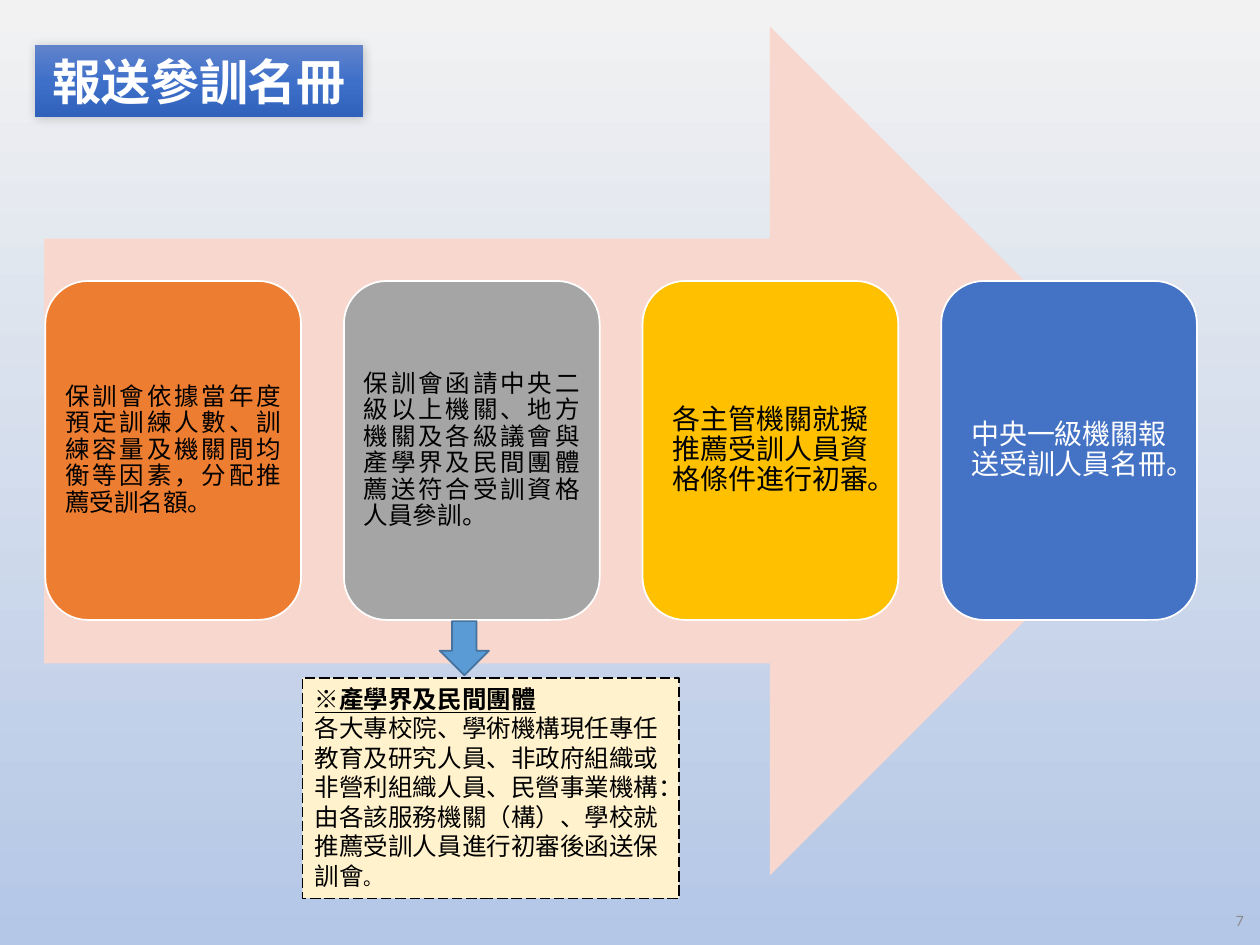
from lxml import etree
from pptx import Presentation
from pptx.dml.color import RGBColor
from pptx.enum.dml import MSO_LINE
from pptx.enum.shapes import MSO_SHAPE
from pptx.enum.text import MSO_ANCHOR, PP_ALIGN
from pptx.oxml.ns import qn
from pptx.util import Inches, Pt

RECT, ROUND = MSO_SHAPE.RECTANGLE, MSO_SHAPE.ROUNDED_RECTANGLE
RIGHT, DOWN = MSO_SHAPE.RIGHT_ARROW, MSO_SHAPE.DOWN_ARROW
MID, TOP = MSO_ANCHOR.MIDDLE, MSO_ANCHOR.TOP
LEFT, CENTER, END, JUST = PP_ALIGN.LEFT, PP_ALIGN.CENTER, PP_ALIGN.RIGHT, PP_ALIGN.JUSTIFY
DASH = MSO_LINE.LONG_DASH
CJK = "Noto Sans CJK SC"

COLORS = {
    "black": "000000", "white": "FFFFFF", "gray": "8C8C8C",
    "pink": "F8D7CE", "orange": "ED7D31", "silver": "A5A5A5",
    "gold": "FFC000", "blue": "4472C4", "cream": "FFF2CC",
    "sky": "5B9BD5", "steel": "43739E", "pale": "F2F2F2", "mist": "B4C7E7",
    "light": "6183CB", "mid": "3E70CA", "deep": "3062BB",
}
TITLE = "報送參訓名冊"
STEPS = [
    ("保訓會依據當年度預定訓練人數、訓練容量及機關間均衡等因素，分配推薦受訓名額。",
     "orange", "black", 14, JUST, 0.06),
    ("保訓會函請中央二級以上機關、地方機關及各級議會與產學界及民間團體薦送符合受訓資格人員參訓。",
     "silver", "black", 14, JUST, 0.06),
    ("各主管機關就擬推薦受訓人員資格條件進行初審。", "gold", "black", 16, CENTER, 0.07),
    ("中央一級機關報送受訓人員名冊。", "blue", "white", 16, CENTER, 0.07),
]
HEAD = "※產學界及民間團體"
NOTE = ("各大專校院、學術機構現任專任教育及研究人員、非政府組織或非營利組織人員、"
        "民營事業機構：由各該服務機關（構）、學校就推薦受訓人員進行初審後函送保訓會")
STOP = "。"
PAGE = "7"


def rgb(name):
    return RGBColor.from_string(COLORS[name])


def blend(fill, root, names):
    fill.gradient()
    fill.gradient_angle = 270
    stops = next(root.iter(qn("a:gsLst")))
    for old in list(stops):
        stops.remove(old)
    for i, name in enumerate(names):
        spot = etree.SubElement(stops, qn("a:gs"), pos=str(100000 * i // (len(names) - 1)))
        etree.SubElement(spot, qn("a:srgbClr"), val=COLORS[name])


def add_shape(kind, box, fill=None, line=None, width=1):
    shape = slide.shapes.add_shape(kind, *map(Inches, box))
    shape.shadow.inherit = False
    if fill:
        shape.fill.solid()
        shape.fill.fore_color.rgb = rgb(fill)
    if line:
        shape.line.color.rgb = rgb(line)
        shape.line.width = Pt(width)
    else:
        shape.line.fill.background()
    return shape


def set_frame(shape, anchor, inset=None):
    frame = shape.text_frame
    frame.word_wrap = True
    frame.vertical_anchor = anchor
    if inset:
        frame.margin_left = frame.margin_right = Inches(inset)
        frame.margin_top = frame.margin_bottom = Inches(inset)
    return frame


def style(para, size, color, align=LEFT, bold=False, face=CJK):
    para.alignment = align
    font = para.font
    font.size, font.bold, font.name = Pt(size), bold, face
    font.color.rgb = rgb(color)
    props = para._p.pPr.find(qn("a:defRPr"))
    etree.SubElement(props, qn("a:ea"), typeface=face)


deck = Presentation()
deck.slide_width, deck.slide_height = Inches(10), Inches(7.5)
slide = deck.slides.add_slide(deck.slide_layouts[6])
blend(slide.background.fill, slide.element, ["pale", "mist"])

page = slide.shapes.add_textbox(*map(Inches, (7.72, 7.1, 2.25, 0.4)))
para = set_frame(page, MID).paragraphs[0]
para.text = PAGE
style(para, 9, "gray", END, face="Calibri")

add_shape(RIGHT, (0.35, 0.21, 9.13, 6.74), "pink")

x, y, wide, high, pitch = 0.36, 2.23, 2.03, 2.69, 2.37
for i, (text, fill, ink, size, align, inset) in enumerate(STEPS):
    card = add_shape(ROUND, (x + i * pitch, y, wide, high), fill, "white")
    para = set_frame(card, MID, inset).paragraphs[0]
    para.text = text
    para.line_spacing = 0.9
    style(para, size, ink, align)

title = add_shape(RECT, (0.28, 0.36, 2.6, 0.57))
blend(title.fill, title._element, ["light", "mid", "deep"])
glow = etree.SubElement(title._element.spPr.find(qn("a:effectLst")), qn("a:outerShdw"),
                        blurRad=str(Pt(6)), dist=str(Pt(1)), dir="2700000")
tint = etree.SubElement(glow, qn("a:srgbClr"), val=COLORS["black"])
etree.SubElement(tint, qn("a:alpha"), val="20000")
para = set_frame(title, TOP).paragraphs[0]
para.text = TITLE
style(para, 28, "white", CENTER, True)

note = add_shape(RECT, (2.4, 5.38, 2.99, 1.75), "cream", "black", 0.75)
note.line.dash_style = DASH
frame = set_frame(note, TOP)
para = frame.paragraphs[0]
para.text = HEAD
style(para, 14, "black", bold=True)
para.font.underline = True
para = frame.add_paragraph()
para.text = NOTE
style(para, 14, "black")
last = para.add_run()
last.text = STOP
last.font.size = Pt(11)

add_shape(DOWN, (3.49, 4.93, 0.39, 0.43), "sky", "steel")

deck.save("out.pptx")
